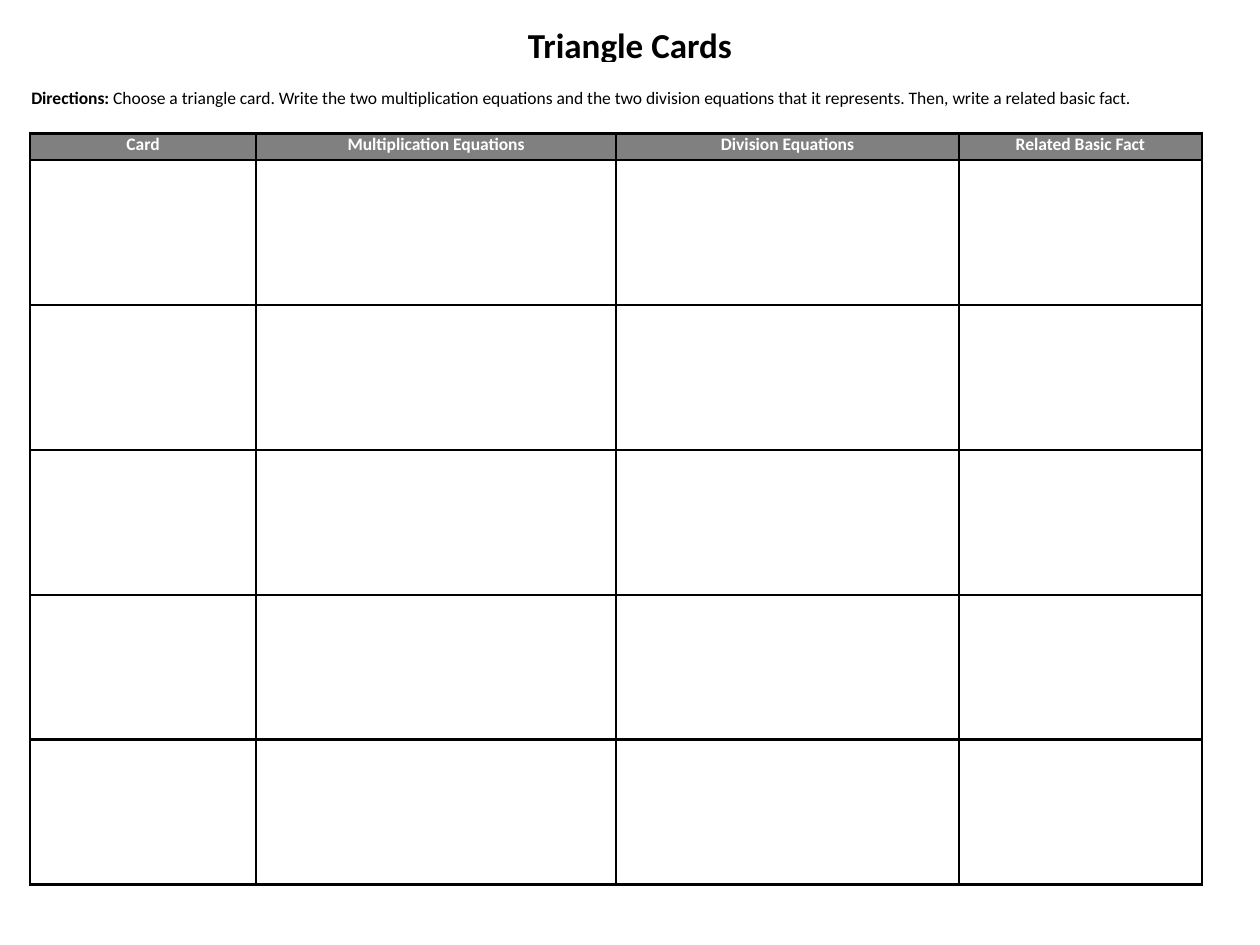
from dataclasses import dataclass

from lxml import etree
from pptx import Presentation
from pptx.dml.color import RGBColor
from pptx.enum.shapes import MSO_SHAPE
from pptx.enum.text import MSO_ANCHOR, PP_ALIGN
from pptx.oxml.ns import qn
from pptx.util import Inches, Pt

RECTANGLE = MSO_SHAPE.RECTANGLE
MIDDLE = MSO_ANCHOR.MIDDLE
LEFT, CENTER = PP_ALIGN.LEFT, PP_ALIGN.CENTER

SLIDE_WIDTH, SLIDE_HEIGHT = 10, 7.5
BANNER_LEFT = 0.015 * SLIDE_WIDTH
BANNER_WIDTH = SLIDE_WIDTH - 2 * BANNER_LEFT
TABLE_LEFT, TABLE_TOP = 0.24, 1.06
HEADER_HEIGHT, CARD_HEIGHT, CARD_COUNT = 0.21, 1.15, 5
COLUMNS = {
    "Card": 1.79,
    "Multiplication Equations": 2.86,
    "Division Equations": 2.72,
    "Related Basic Fact": 1.93,
}
DIRECTIONS = (
    " Choose a triangle card. Write the two multiplication equations and the two "
    "division equations that it represents. Then, write a related basic fact."
)


@dataclass(frozen=True)
class Theme:
    font: str = "Calibri"
    ink: RGBColor = RGBColor(0, 0, 0)
    paper: RGBColor = RGBColor(255, 255, 255)
    header: RGBColor = RGBColor(128, 128, 128)
    title_size: int = 20
    body_size: int = 10
    banner_line: float = 1
    border: float = 1.5


THEME = Theme()


def add_run(paragraph, text, size, color, bold):
    run = paragraph.add_run()
    run.text = text
    formats = {"name": THEME.font, "size": Pt(size), "bold": bold}
    for name, value in formats.items():
        setattr(run.font, name, value)
    run.font.color.rgb = color


def paint(fill, color):
    fill.solid()
    fill.fore_color.rgb = color


def add_banner(slide, top, height, runs, size, alignment):
    """Add a full-width text band; runs are (text, bold) pairs."""
    box = (BANNER_LEFT, top, BANNER_WIDTH, height)
    shape = slide.shapes.add_shape(RECTANGLE, *map(Inches, box))
    shape.shadow.inherit = False
    paint(shape.fill, THEME.paper)
    paint(shape.line.fill, THEME.paper)
    shape.line.width = Pt(THEME.banner_line)
    frame = shape.text_frame
    frame.word_wrap = True
    frame.vertical_anchor = MIDDLE
    paragraph = frame.paragraphs[0]
    paragraph.alignment = alignment
    for text, bold in runs:
        add_run(paragraph, text, size, THEME.ink, bold)


def set_borders(cell):
    properties = cell._tc.get_or_add_tcPr()
    for index, side in enumerate(("lnL", "lnR", "lnT", "lnB")):
        line = etree.Element(qn(f"a:{side}"), w=str(Pt(THEME.border)))
        fill = etree.SubElement(line, qn("a:solidFill"))
        etree.SubElement(fill, qn("a:srgbClr"), val=str(THEME.ink))
        properties.insert(index, line)


def write_header(cell, text):
    margins = {"margin_left": 0.06, "margin_right": 0.06,
               "margin_top": 0, "margin_bottom": 0}
    for name, value in margins.items():
        setattr(cell, name, Inches(value))
    paragraph = cell.text_frame.paragraphs[0]
    paragraph.alignment = CENTER
    add_run(paragraph, text, THEME.body_size, THEME.paper, True)


def add_card_table(slide):
    heights = [HEADER_HEIGHT] + [CARD_HEIGHT] * CARD_COUNT
    box = (TABLE_LEFT, TABLE_TOP, sum(COLUMNS.values()), sum(heights))
    table = slide.shapes.add_table(
        len(heights), len(COLUMNS), *map(Inches, box)).table
    for column, width in zip(table.columns, COLUMNS.values()):
        column.width = Inches(width)
    for row, height in zip(table.rows, heights):
        row.height = Inches(height)
    for cell, heading in zip(table.rows[0].cells, COLUMNS):
        write_header(cell, heading)
    for row_index, row in enumerate(table.rows):
        for cell in row.cells:
            paint(cell.fill, THEME.paper if row_index else THEME.header)
            set_borders(cell)


def main():
    presentation = Presentation()
    presentation.slide_width = Inches(SLIDE_WIDTH)
    presentation.slide_height = Inches(SLIDE_HEIGHT)
    slide = presentation.slides.add_slide(presentation.slide_layouts[6])
    add_banner(slide, 0.12, 0.46, [("Triangle Cards", True)],
               THEME.title_size, CENTER)
    add_banner(slide, 0.5, 0.55, [("Directions:", True), (DIRECTIONS, False)],
               THEME.body_size, LEFT)
    add_card_table(slide)
    presentation.save("out.pptx")


if __name__ == "__main__":
    main()
